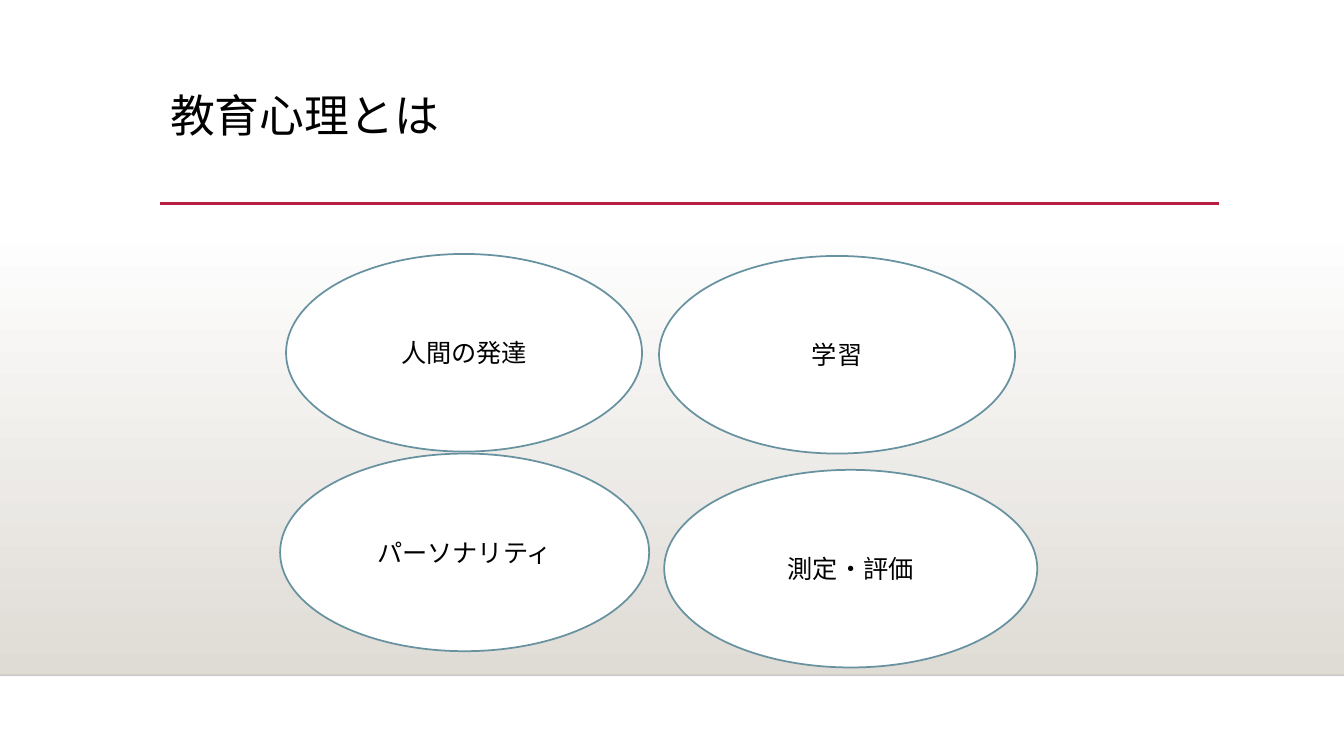
from lxml.etree import SubElement
from pptx import Presentation
from pptx.dml.color import RGBColor
from pptx.enum.shapes import MSO_CONNECTOR, MSO_SHAPE
from pptx.enum.text import MSO_ANCHOR, PP_ALIGN
from pptx.oxml.ns import qn
from pptx.util import Cm, Pt

PAGE_WIDTH, PAGE_HEIGHT = 33.87, 19.05
FLOOR = 17.02


def color(value):
    return RGBColor.from_string(value)


class TopicPage:
    font_name = "Cabin"
    ink, paper, shade = "000000", "FFFFFF", "DFDBD5"
    accent, outline = "B71E42", "6892A0"

    def __init__(self, deck):
        self.page = deck.slides.add_slide(deck.slide_layouts[6])

    def set_text(self, frame, text, size, anchor, **paragraph_format):
        frame.word_wrap = True
        frame.vertical_anchor = anchor
        para = frame.paragraphs[0]
        for name, value in paragraph_format.items():
            setattr(para, name, value)
        span = para.add_run()
        span.text = text
        for name, value in {"name": self.font_name, "size": Pt(size)}.items():
            setattr(span.font, name, value)
        span.font.color.rgb = color(self.ink)

    def gradient_band(self, top, bottom):
        band = self.page.shapes.add_shape(
            MSO_SHAPE.RECTANGLE, 0, Cm(top), Cm(PAGE_WIDTH), Cm(bottom - top))
        band.shadow.inherit = False
        band.line.fill.background()
        band.fill.gradient()
        band.fill.gradient_angle = 270
        for stop, tone in zip(band.fill.gradient_stops, (self.paper, self.shade)):
            stop.color.rgb = color(tone)

    def rule(self, left, right, top, tone, width, opacity=100):
        line = self.page.shapes.add_connector(
            MSO_CONNECTOR.STRAIGHT, Cm(left), Cm(top), Cm(right), Cm(top))
        line.line.color.rgb = color(tone)
        line.line.width = Pt(width)
        properties = line._element.spPr
        if opacity < 100:
            solid = properties.find(".//" + qn("a:srgbClr"))
            SubElement(solid, qn("a:alpha"), val=str(opacity * 1000))
        SubElement(properties, qn("a:effectLst"))

    def title(self, text, left, top, width, height):
        box = self.page.shapes.add_textbox(Cm(left), Cm(top), Cm(width), Cm(height))
        self.set_text(box.text_frame, text, 32, MSO_ANCHOR.TOP, line_spacing=0.9)

    def topic(self, text, left, top, width, height=4.98):
        oval = self.page.shapes.add_shape(
            MSO_SHAPE.OVAL, Cm(left), Cm(top), Cm(width), Cm(height))
        oval.shadow.inherit = False
        oval.fill.solid()
        oval.fill.fore_color.rgb = color(self.paper)
        oval.line.color.rgb = color(self.outline)
        oval.line.width = Pt(1.25)
        self.set_text(oval.text_frame, text, 18, MSO_ANCHOR.MIDDLE,
                      alignment=PP_ALIGN.CENTER)


def main():
    deck = Presentation()
    deck.slide_width, deck.slide_height = Cm(PAGE_WIDTH), Cm(PAGE_HEIGHT)
    page = TopicPage(deck)

    # Background
    page.gradient_band(5.61, FLOOR)
    page.rule(0, PAGE_WIDTH, FLOOR, "000001", 1, opacity=20)

    # Heading
    page.rule(4.04, 30.73, 5.13, page.accent, 2.5)
    page.title("教育心理とは", 4.04, 2.24, 26.67, 2.92)

    # Four topics: text, left, top, width
    topics = [
        ("人間の発達", 7.21, 6.4, 8.97),
        ("学習", 16.61, 6.45, 8.97),
        ("パーソナリティ", 7.06, 11.43, 9.3),
        ("測定・評価", 16.74, 11.84, 9.4),
    ]
    for topic in topics:
        page.topic(*topic)

    deck.save("out.pptx")


if __name__ == "__main__":
    main()
